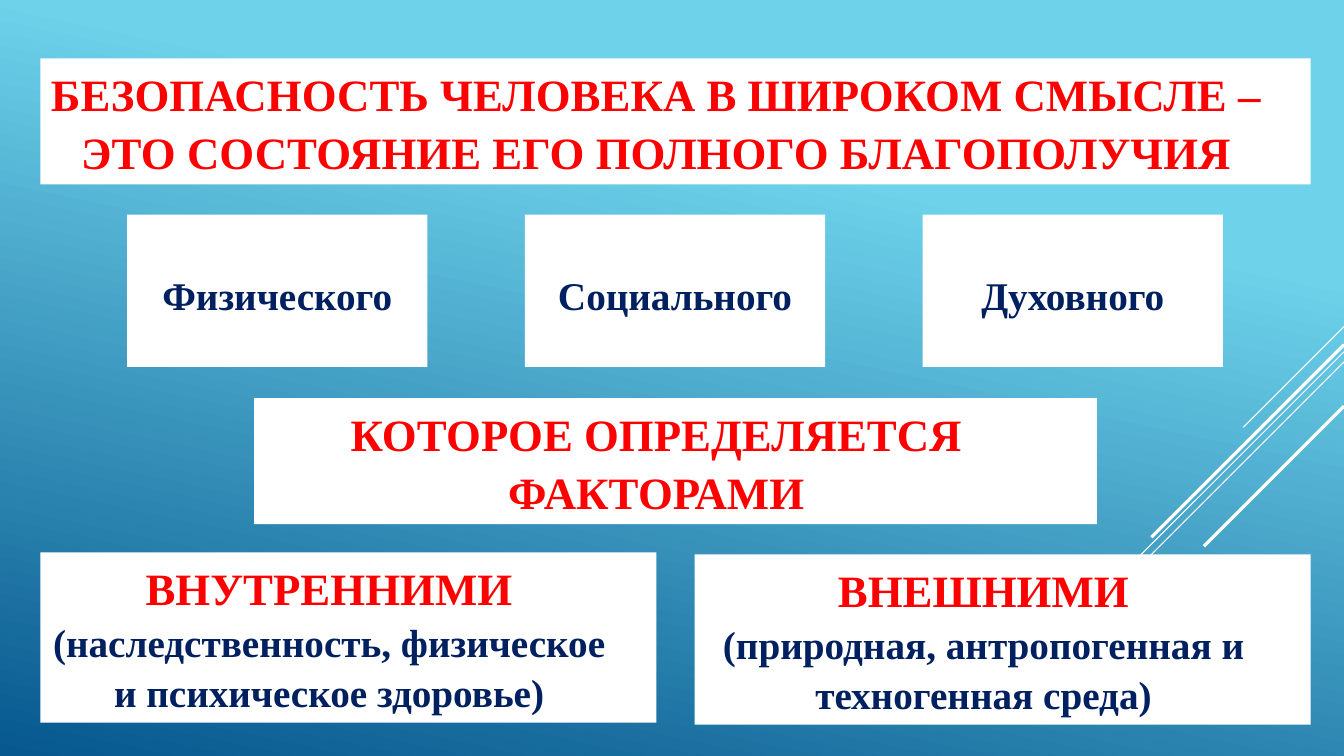
from pptx import Presentation
from pptx.dml.color import RGBColor
from pptx.enum.shapes import MSO_CONNECTOR as Connector, MSO_SHAPE as Shape
from pptx.enum.text import MSO_ANCHOR as Anchor, PP_ALIGN as Align
from pptx.util import Inches, Pt
from lxml.etree import SubElement
from pptx.oxml.ns import qn

COLORS = {"white": "FFFFFF", "red": "FF0000", "navy": "002060",
          "sky": "6ED2EB", "deep": "06588E"}
WIDTH, HEIGHT = 13.33, 7.5

HEADING = {"size": Pt(32), "color": "red", "line_spacing": 1.07}
DETAIL = {"size": Pt(28), "color": "navy", "line_spacing": 1.07}
LABEL = {"size": Pt(28), "color": "navy", "line_spacing": 1.0}


def color(name):
    return RGBColor.from_string(COLORS[name])


def add_panel(left, top, width, height, paragraphs, margin_top=0.05, margin_right=0.48):
    """White rectangle holding centred bold paragraphs of (text, style)."""
    panel = slide.shapes.add_shape(
        Shape.RECTANGLE, Inches(left), Inches(top), Inches(width), Inches(height))
    panel.shadow.inherit = False
    panel.fill.solid()
    panel.fill.fore_color.rgb = color("white")
    panel.line.fill.background()
    frame = panel.text_frame
    frame_format = {"word_wrap": True, "vertical_anchor": Anchor.TOP,
                    "margin_left": Inches(0.1), "margin_right": Inches(margin_right),
                    "margin_top": Inches(margin_top), "margin_bottom": Inches(0.05)}
    for name, value in frame_format.items():
        setattr(frame, name, value)
    for index, (text, style) in enumerate(paragraphs):
        paragraph = frame.add_paragraph() if index else frame.paragraphs[0]
        paragraph.alignment = Align.CENTER
        paragraph.line_spacing = style["line_spacing"]
        run = paragraph.add_run()
        run.text = text
        font_format = {"name": "Times New Roman", "size": style["size"], "bold": True}
        for name, value in font_format.items():
            setattr(run.font, name, value)
        run.font.color.rgb = color(style["color"])


presentation = Presentation()
presentation.slide_width = Inches(WIDTH)
presentation.slide_height = Inches(HEIGHT)
slide = presentation.slides.add_slide(presentation.slide_layouts[6])

# Background gradient
background = slide.background.fill
background.gradient()
background.gradient_angle = 258
for stop, (position, name) in zip(background.gradient_stops, [(0.27, "sky"), (1, "deep")]):
    stop.position = position
    stop.color.rgb = color(name)

# Diagonal rays at 45 degrees from the right edge: top, run, weight
for top, run_length, weight in [(3.24, 1.0, 0.75), (3.49, 3.26, 0.75), (3.59, 2.07, 0.75),
                                (3.42, 1.91, 2.25), (4.03, 1.39, 2.25)]:
    ray = slide.shapes.add_connector(
        Connector.STRAIGHT, Inches(WIDTH), Inches(top),
        Inches(WIDTH - run_length), Inches(top + run_length))
    ray.line.color.rgb = color("white")
    ray.line.width = Pt(weight)
    SubElement(ray._element.spPr, qn("a:effectLst"))

# Headings
add_panel(0.4, 0.58, 12.6, 1.25, [
    ("БЕЗОПАСНОСТЬ ЧЕЛОВЕКА В ШИРОКОМ СМЫСЛЕ – ЭТО СОСТОЯНИЕ ЕГО ПОЛНОГО БЛАГОПОЛУЧИЯ",
     HEADING)])
add_panel(2.52, 3.95, 8.36, 1.25, [("КОТОРОЕ ОПРЕДЕЛЯЕТСЯ ФАКТОРАМИ", HEADING)])

# Three kinds of well-being
for column, kind in enumerate(["Физического", "Социального", "Духовного"]):
    add_panel(1.26 + column * 3.945, 2.13, 2.98, 1.51, [(kind, LABEL)],
              margin_top=0.56, margin_right=0.1)

# Two groups of factors
factors = [
    (0.4, 5.48, "ВНУТРЕННИМИ", "(наследственность, физическое и психическое здоровье)"),
    (6.89, 5.5, "ВНЕШНИМИ", "(природная, антропогенная и техногенная среда)"),
]
for left, top, group, examples in factors:
    add_panel(left, top, 6.11, 1.69, [(group, HEADING), (examples, DETAIL)])

presentation.save("out.pptx")
